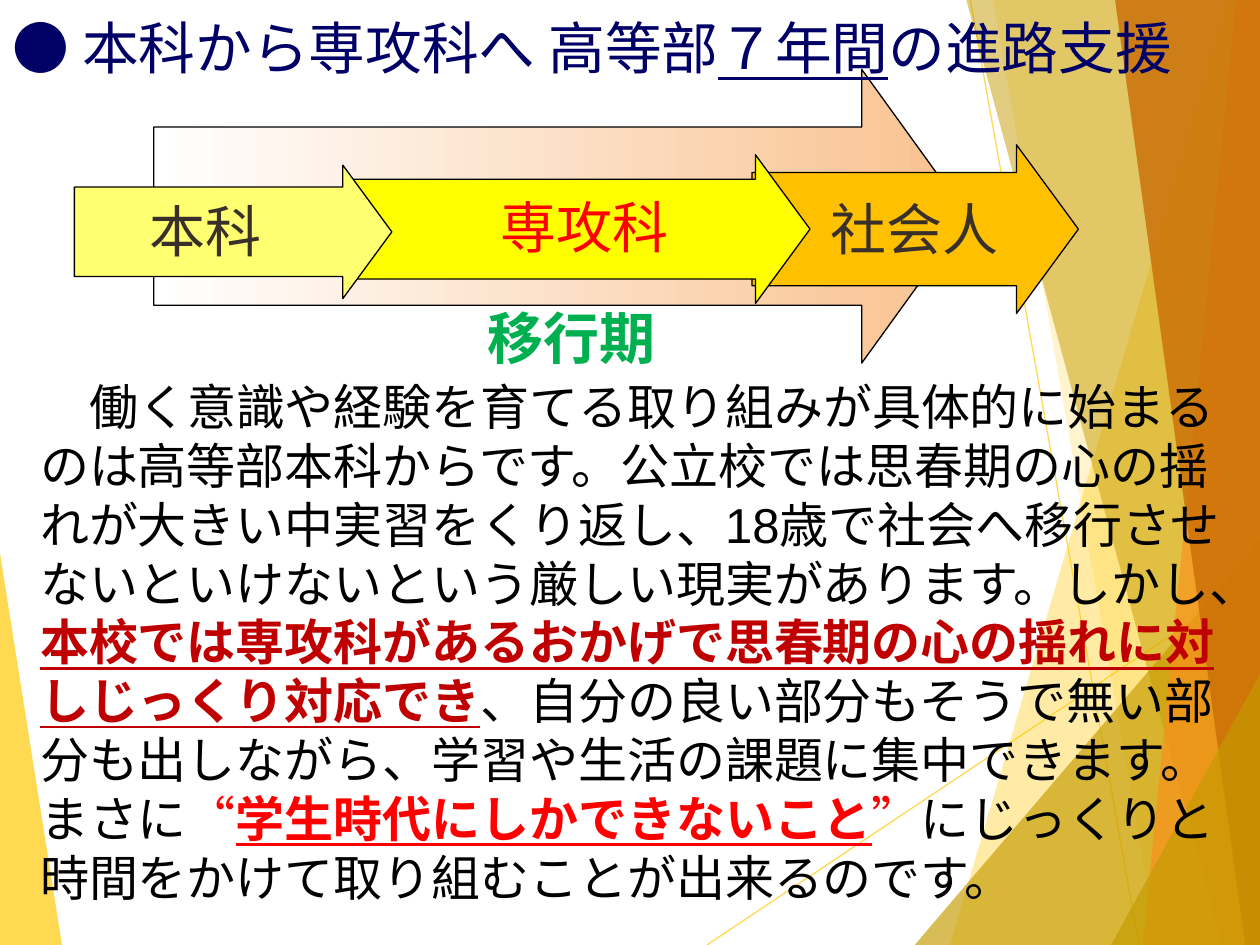
import pptx
import pptx.dml.color
import pptx.enum.dml
import pptx.enum.shapes
import pptx.enum.text
import pptx.oxml
import pptx.oxml.ns
import pptx.util
from pptx.util import Cm

COLORS = {
    "gold": "FFCA08", "olive": "C59B00", "orange": "F8931D", "rust": "CA6F06",
    "white": "FFFFFF", "peach": "F9C18F", "amber": "FFC000", "yellow": "FFFF00",
    "lemon": "FFFF71", "black": "000000", "navy": "000066", "brown": "39302A",
    "red": "FF0000", "crimson": "C00000", "green": "00B050",
}
WIDTH, HEIGHT = 25.4, 19.05
ANCHOR = pptx.enum.text.MSO_ANCHOR


def rgb(name):
    """Return the named colour."""
    return pptx.dml.color.RGBColor.from_string(COLORS[name])


def write(paragraph, text, color="black", size=28, font="Arial", bold=False, underline=False):
    """Add one formatted run to a paragraph."""
    run = paragraph.add_run()
    run.text = text
    run.font.name, run.font.size = font, pptx.util.Pt(size)
    run.font.bold, run.font.underline = bold, underline
    run.font.color.rgb = rgb(color)


def set_alpha(fill_parent, percent):
    """Make the solid colour under an element partly transparent."""
    color = fill_parent.find(".//" + pptx.oxml.ns.qn("a:srgbClr"))
    alpha = pptx.oxml.parse_xml(f'<a:alpha {pptx.oxml.ns.nsdecls("a")} val="{percent * 1000}"/>')
    color.append(alpha)


class SlideBuilder:
    """Hold the style and the current slide."""

    def __init__(self, slide, label_font="Lato", line_width=0.75):
        """Keep the slide and its shared style."""
        self.slide = slide
        self.shapes = slide.shapes
        self.label_font = label_font
        self.line_width = pptx.util.Pt(line_width)

    def facet(self, points, color, opacity):
        """Draw a translucent background polygon."""
        corners = [(Cm(x), Cm(y)) for x, y in points]
        builder = self.shapes.build_freeform(*corners[0])
        builder.add_line_segments(corners[1:], close=True)
        shape = builder.convert_to_shape()
        shape.shadow.inherit = False
        shape.fill.solid()
        shape.fill.fore_color.rgb = rgb(color)
        shape.line.fill.background()
        set_alpha(shape._element.spPr, opacity)

    def ray(self, start, end, color="gold", opacity=70):
        """Draw a thin translucent background line."""
        line = self.shapes.add_connector(
            pptx.enum.shapes.MSO_CONNECTOR.STRAIGHT, *map(Cm, start + end))
        line.line.width = self.line_width
        line.line.color.rgb = rgb(color)
        properties = line._element.spPr
        set_alpha(properties, opacity)
        properties.append(pptx.oxml.parse_xml(f'<a:effectLst {pptx.oxml.ns.nsdecls("a")}/>'))

    def arrow(self, box, colors, shaft=0.671, head=0.367):
        """Draw a right arrow with one colour or a two-colour gradient."""
        shape = self.shapes.add_shape(
            pptx.enum.shapes.MSO_SHAPE.RIGHT_ARROW, *map(Cm, box))
        shape.adjustments[0], shape.adjustments[1] = shaft, head
        shape.shadow.inherit = False
        if len(colors) == 1:
            shape.fill.solid()
            shape.fill.fore_color.rgb = rgb(colors[0])
        else:
            shape.fill.gradient()
            shape.fill.gradient_angle = 0
            for stop, position, color in zip(shape.fill.gradient_stops, (0, 1), colors):
                stop.position = position
                stop.color.rgb = rgb(color)
        shape.line.color.rgb = rgb("black")
        shape.line.width = self.line_width

    def title(self, box, runs):
        """Place and write the title above what is already drawn."""
        title = self.shapes.title
        title.left, title.top, title.width, title.height = map(Cm, box)
        frame = title.text_frame
        frame.word_wrap = True
        frame.auto_size = pptx.enum.text.MSO_AUTO_SIZE.NONE
        frame.vertical_anchor = ANCHOR.TOP
        frame.paragraphs[0].alignment = pptx.enum.text.PP_ALIGN.LEFT
        for text, style in runs:
            write(frame.paragraphs[0], text, color="navy", size=32.4, **style)
        self.shapes._spTree.append(title._element)

    def text_box(self, box, anchor):
        """Add a wrapping text box and return its first paragraph."""
        frame = self.shapes.add_textbox(*map(Cm, box)).text_frame
        frame.word_wrap = True
        frame.vertical_anchor = anchor
        return frame.paragraphs[0]

    def label(self, box, text, color, bold=False):
        """Write a centred stage label."""
        paragraph = self.text_box(box, ANCHOR.BOTTOM)
        paragraph.alignment = pptx.enum.text.PP_ALIGN.CENTER
        write(paragraph, text, color=color, size=32, font=self.label_font, bold=bold)

    def body(self, box, runs, indent):
        """Write a paragraph with an indented first line."""
        paragraph = self.text_box(box, ANCHOR.MIDDLE)
        paragraph._p.get_or_add_pPr().set("indent", str(Cm(indent)))
        for text, style in runs:
            write(paragraph, text, **style)


def right_band(top_x, bottom_x):
    """Return a band reaching from a slanted edge to the right side."""
    return [(top_x, 0), (bottom_x, HEIGHT), (WIDTH, HEIGHT), (WIDTH, 0)]


def right_corner(bottom_x, right_y):
    """Return a triangle in the bottom right corner."""
    return [(bottom_x, HEIGHT), (WIDTH, right_y), (WIDTH, HEIGHT)]


def main():
    """Build the slide and save it."""
    deck = pptx.Presentation()
    deck.slide_width, deck.slide_height = Cm(WIDTH), Cm(HEIGHT)
    builder = SlideBuilder(deck.slides.add_slide(deck.slide_layouts[5]))

    builder.facet([(0, 11.15), (1.25, HEIGHT), (0, HEIGHT)], "gold", 70)
    builder.ray((14.25, HEIGHT), (WIDTH, 11.61))
    builder.ray((19.56, 0), (22.96, HEIGHT))
    for facet in [
        (right_band(24.77, 19.15), "gold", 36),
        (right_band(20.02, 23.34), "gold", 20),
        (right_corner(18.44, 10.9), "olive", 66),
        (right_band(19.48, 24.64), "olive", 50),
        (right_band(24.92, 23.04), "orange", 70),
        (right_band(22.48, 25.1), "rust", 82),
        (right_corner(22.4, 13.59), "olive", 66),
    ]:
        builder.facet(*facet)

    builder.arrow((3.1, 1.4, 16.41, 5.92), ["white", "peach"], shaft=0.607, head=0.361)
    builder.arrow((15.16, 2.92, 6.58, 3.4), ["amber"])
    builder.title((0, 0.13, WIDTH, 2.34), [
        ("● 本科から専攻科へ 高等部", {}),
        ("７年間", {"underline": True}),
        ("の進路支援", {}),
    ])
    builder.arrow((6.93, 3.12, 9.4, 3), ["yellow"])
    builder.arrow((1.5, 3.33, 6.4, 2.69), ["lemon"])

    builder.label((1.5, 3.94, 5.28, 1.5), "本科", "brown")
    builder.label((7.7, 3.89, 8.18, 1.47), "専攻科", "red")
    builder.label((16.31, 3.94, 4.24, 1.47), "社会人", "brown")
    builder.label((9.4, 6.12, 4.24, 1.47), "移行期", "green", bold=True)

    builder.body((0.56, 7.52, 24.31, 10.82), [
        ("働く意識や経験を育てる取り組みが具体的に始まるのは高等部本科からです。"
         "公立校では思春期の心の揺れが大きい中実習をくり返し、18歳で社会へ移行させないと"
         "いけないという厳しい現実があります。しかし、", {}),
        ("本校では専攻科があるおかげで思春期の心の揺れに対しじっくり対応でき",
         {"color": "crimson", "bold": True, "underline": True}),
        ("、自分の良い部分もそうで無い部分も出しながら、"
         "学習や生活の課題に集中できます。まさに", {}),
        ("“", {"color": "red"}),
        ("学生時代にしかできないこと", {"color": "red", "bold": True, "underline": True}),
        ("”", {"color": "red"}),
        ("にじっくりと時間をかけて取り組むことが出来るのです。", {}),
    ], indent=0.99)
    deck.save("out.pptx")


if __name__ == "__main__":
    main()
